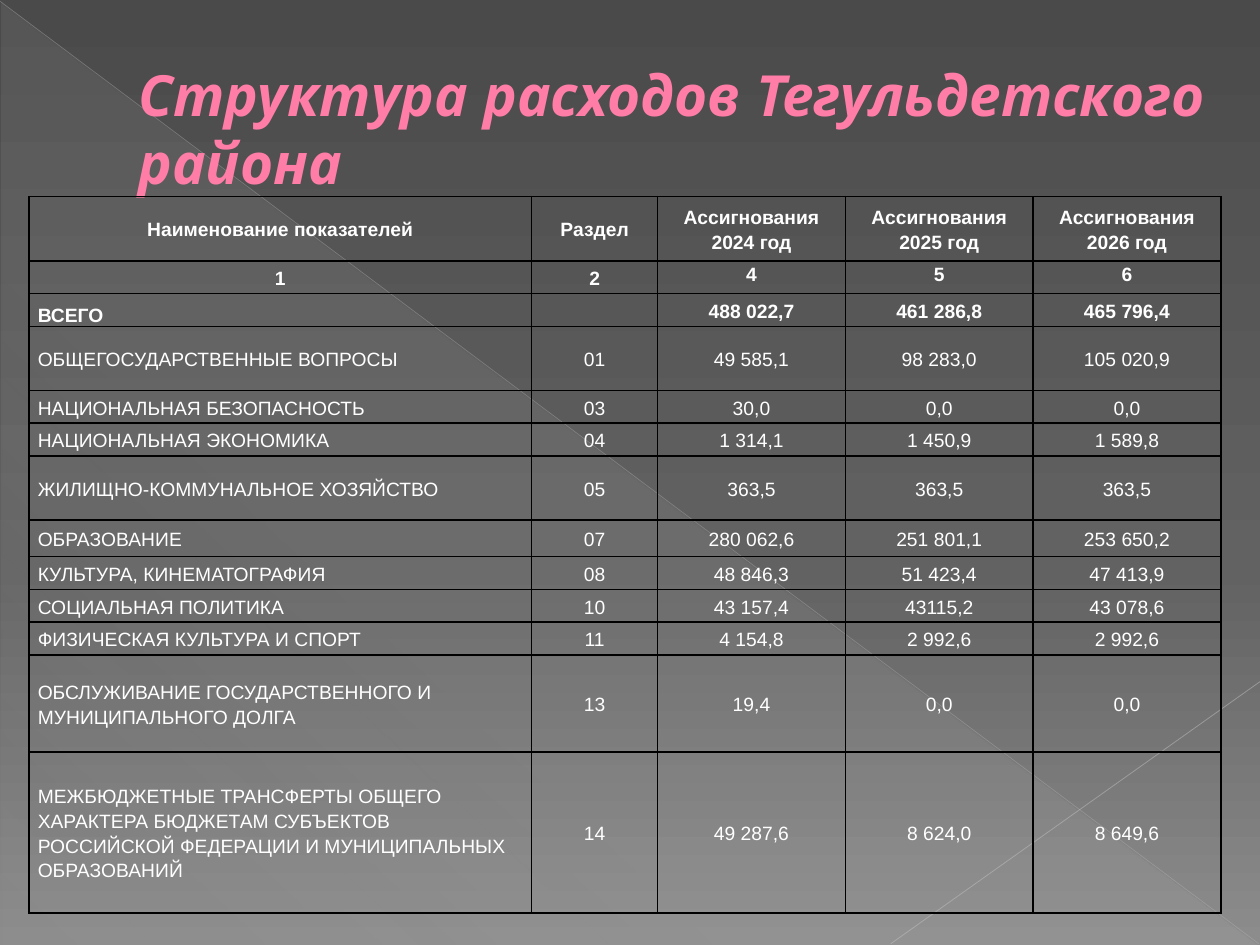
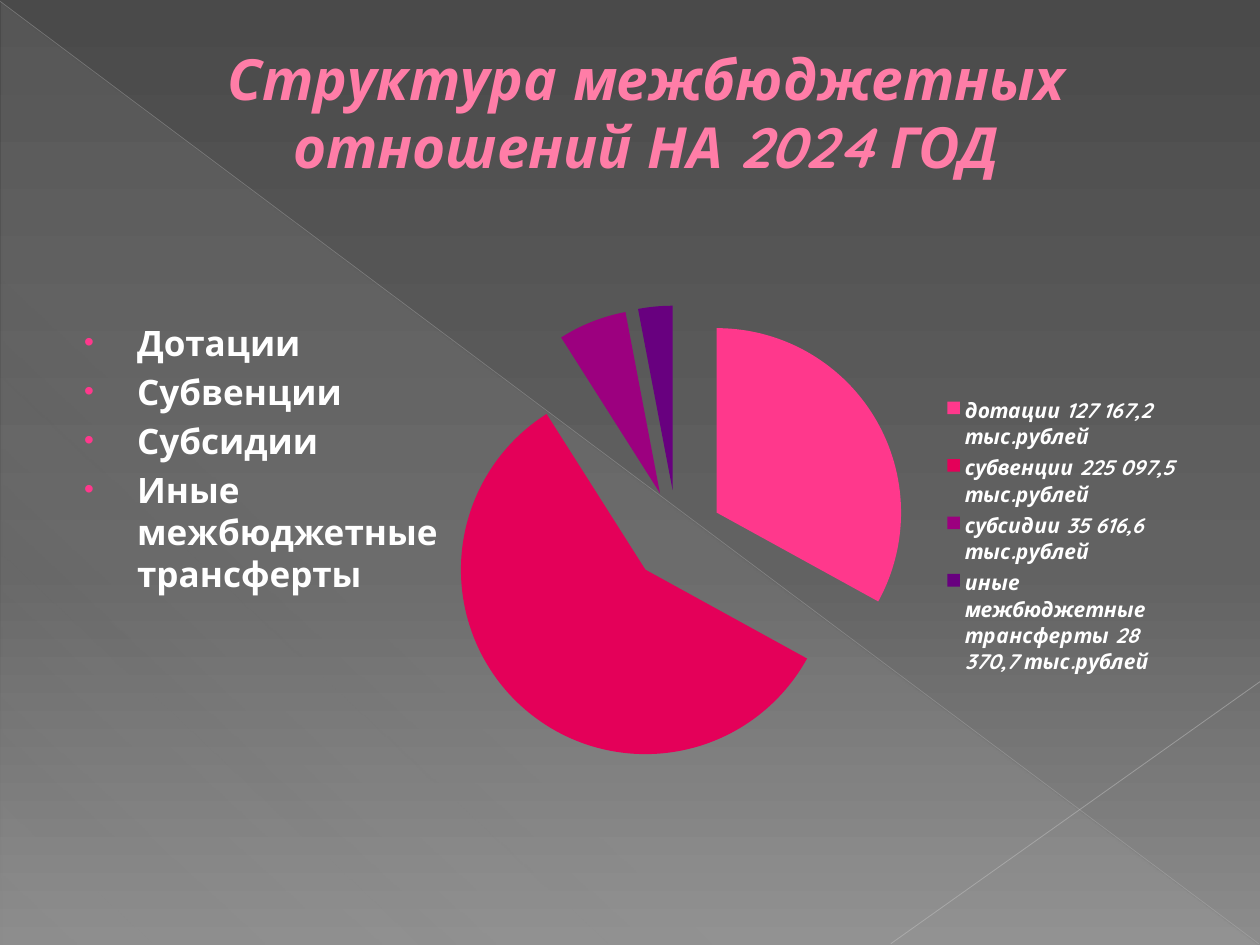
from dataclasses import dataclass

from lxml import etree
from pptx import Presentation
from pptx.chart.data import CategoryChartData
from pptx.dml.color import RGBColor
from pptx.enum.chart import XL_CHART_TYPE as ChartType, XL_LEGEND_POSITION as LegendPosition
from pptx.enum.shapes import MSO_CONNECTOR as Connector, MSO_SHAPE as Shape
from pptx.enum.text import MSO_ANCHOR as Anchor, MSO_AUTO_SIZE as AutoSize, PP_ALIGN as Align
from pptx.oxml.ns import qn
from pptx.util import Inches, Pt


@dataclass(frozen=True)
class Theme:
    title_font: str = "Quicksand"
    table_font: str = "Arial"
    text: str = "FFFFFF"
    title: str = "FF7DA7"
    title_outline: str = "B12761"
    accent: str = "FF388C"
    border: str = "000000"
    veil: str = "D2D2D2"
    diagonal: str = "BFBFBF"
    corner: str = "C6C6C6"
    background: tuple = ((0, "4A4A4A", 100), (60, "626262", 100), (100, "8C8C8C", 100))
    slices: tuple = ("FF388C", "E40059", "9C007F", "68007F")
    title_size: float = 32.4
    body_size: float = 20
    legend_size: float = 12
    chart_size: float = 10
    table_size: float = 11


THEME = Theme()

COLUMN_WIDTHS = (3.99, 1, 1.49, 1.49, 1.49)
EXPENSES = [
    (0.51, "Наименование показателей", "Раздел",
     "Ассигнования 2024 год", "Ассигнования 2025 год", "Ассигнования 2026 год"),
    (0.26, "1", "2", "4", "5", "6"),
    (0.26, "ВСЕГО", "", "488 022,7", "461 286,8", "465 796,4"),
    (0.51, "ОБЩЕГОСУДАРСТВЕННЫЕ ВОПРОСЫ", "01", "49 585,1", "98 283,0", "105 020,9"),
    (0.26, "НАЦИОНАЛЬНАЯ БЕЗОПАСНОСТЬ", "03", "30,0", "0,0", "0,0"),
    (0.26, "НАЦИОНАЛЬНАЯ ЭКОНОМИКА", "04", "1 314,1", "1 450,9", "1 589,8"),
    (0.51, "ЖИЛИЩНО-КОММУНАЛЬНОЕ ХОЗЯЙСТВО", "05", "363,5", "363,5", "363,5"),
    (0.29, "ОБРАЗОВАНИЕ", "07", "280 062,6", "251 801,1", "253 650,2"),
    (0.26, "КУЛЬТУРА, КИНЕМАТОГРАФИЯ", "08", "48 846,3", "51 423,4", "47 413,9"),
    (0.26, "СОЦИАЛЬНАЯ ПОЛИТИКА", "10", "43 157,4", "43115,2", "43 078,6"),
    (0.26, "ФИЗИЧЕСКАЯ КУЛЬТУРА И СПОРТ", "11", "4 154,8", "2 992,6", "2 992,6"),
    (0.77, "ОБСЛУЖИВАНИЕ ГОСУДАРСТВЕННОГО И МУНИЦИПАЛЬНОГО ДОЛГА",
     "13", "19,4", "0,0", "0,0"),
    (1.28, "МЕЖБЮДЖЕТНЫЕ ТРАНСФЕРТЫ ОБЩЕГО ХАРАКТЕРА БЮДЖЕТАМ СУБЪЕКТОВ "
           "РОССИЙСКОЙ ФЕДЕРАЦИИ И МУНИЦИПАЛЬНЫХ ОБРАЗОВАНИЙ",
     "14", "49 287,6", "8 624,0", "8 649,6"),
]
BOLD_ROWS = 3
NUMBERING_ROW, TOTAL_ROW = 1, 2

TRANSFER_KINDS = ["Дотации", "Субвенции", "Субсидии", "Иные межбюджетные трансферты"]
TRANSFER_SHARES = {
    "дотации 127 167,2 тыс.рублей": 33,
    "субвенции 225 097,5 тыс.рублей": 58,
    "субсидии 35 616,6 тыс.рублей": 6,
    "иные межбюджетные трансферты 28 370,7 тыс.рублей": 3,
}


def box(left, top, width, height):
    return Inches(left), Inches(top), Inches(width), Inches(height)


def add_node(parent, tag, **attributes):
    return etree.SubElement(parent, qn(tag), attributes)


def add_color(parent, color, opacity=100):
    node = add_node(parent, "a:srgbClr", val=color)
    if opacity < 100:
        add_node(node, "a:alpha", val=str(opacity * 1000))


def add_solid_fill(parent, color, opacity=100):
    add_color(add_node(parent, "a:solidFill"), color, opacity)


def style_font(font, name, size, color=THEME.text, bold=False, italic=False):
    font.name = name
    font.size = Pt(size)
    font.bold = bold
    font.italic = italic
    font.color.rgb = RGBColor.from_string(color)


def set_gradient(fill, owner, stops, angle):
    fill.gradient()
    fill.gradient_angle = 360 - angle
    stop_list = owner.find(".//" + qn("a:gsLst"))
    for stop in list(stop_list):
        stop_list.remove(stop)
    for position, color, opacity in stops:
        add_color(add_node(stop_list, "a:gs", pos=str(position * 1000)), color, opacity)


def add_hairline(slide, start, end, color, width, opacity):
    line = slide.shapes.add_connector(
        Connector.STRAIGHT, *(Inches(value) for value in start + end))
    line.line.width = Pt(width)
    line.line.color.rgb = RGBColor.from_string(color)
    tint = line.element.find(".//" + qn("a:ln")).find(".//" + qn("a:srgbClr"))
    add_node(tint, "a:alpha", val=str(opacity * 1000))
    add_node(line.element.spPr, "a:effectLst")
    return line


def build_backdrop(master, slide):
    set_gradient(master.background.fill, master.element, THEME.background, 90)
    veil = slide.shapes.add_shape(Shape.RIGHT_TRIANGLE, *box(0.01, 0.02, 9.98, 7.48))
    veil.shadow.inherit = False
    veil.line.fill.background()
    veil_stops = [(position, THEME.veil, opacity)
                  for position, opacity in ((0, 10), (70, 8), (100, 1))]
    set_gradient(veil.fill, veil.element, veil_stops, 133)
    diagonal = add_hairline(slide, (0, 0.01), (9.99, 7.49), THEME.diagonal, 0.39, 35)
    corner = add_hairline(slide, (10, 5.41), (7.07, 7.49), THEME.corner, 0.47, 45)
    for index, shape in enumerate((veil, diagonal, corner)):
        shape.element.find(".//" + qn("p:cNvPr")).set("id", str(100 + index))
        master.shapes.element.insert(2 + index, shape.element)


def set_title(slide, text, frame, alignment):
    title = slide.shapes.title
    title.left, title.top, title.width, title.height = box(*frame)
    text_frame = title.text_frame
    text_frame.text = text
    text_frame.auto_size = AutoSize.NONE
    text_frame.vertical_anchor = Anchor.MIDDLE
    paragraph = text_frame.paragraphs[0]
    paragraph.alignment = alignment
    properties = paragraph._p.get_or_add_pPr()
    properties.set("marL", str(Inches(0.53)))
    properties.set("indent", "0")
    run = paragraph.runs[0]
    style_font(run.font, THEME.title_font, THEME.title_size, THEME.title, True, True)
    run_properties = run._r.get_or_add_rPr()
    outline = add_node(run_properties, "a:ln", w=str(Pt(0.5)))
    add_solid_fill(outline, THEME.title_outline)
    run_properties.insert(0, outline)


def add_borders(cell):
    properties = cell._tc.get_or_add_tcPr()
    for side in ("a:lnL", "a:lnR", "a:lnT", "a:lnB"):
        add_solid_fill(add_node(properties, side, w=str(Pt(1))), THEME.border)


def fill_cell(cell, text, alignment, anchor, bold):
    cell.margin_left = cell.margin_right = Inches(0.07)
    cell.margin_top = cell.margin_bottom = 0
    cell.vertical_anchor = anchor
    add_borders(cell)
    cell.fill.background()
    cell.text_frame.text = text
    paragraph = cell.text_frame.paragraphs[0]
    paragraph.alignment = alignment
    paragraph.line_spacing = 1.15
    for run in paragraph.runs:
        style_font(run.font, THEME.table_font, THEME.table_size, bold=bold)
    if not text:
        add_node(paragraph._p, "a:endParaRPr", sz=str(THEME.table_size * 100))


def cell_anchor(row, column):
    if row == NUMBERING_ROW and column >= 2:
        return Anchor.TOP
    if row == TOTAL_ROW and column == 0:
        return Anchor.BOTTOM
    return Anchor.MIDDLE


def add_expense_table(slide):
    frame = slide.shapes.add_table(
        len(EXPENSES), len(COLUMN_WIDTHS), *box(0.23, 1.56, 9.45, 5.68))
    table = frame.table
    table.first_row = False
    table.horz_banding = False
    for column, width in zip(table.columns, COLUMN_WIDTHS):
        column.width = Inches(width)
    for row, (height, *texts) in enumerate(EXPENSES):
        table.rows[row].height = Inches(height)
        for column, text in enumerate(texts):
            is_name = column == 0 and row >= TOTAL_ROW
            fill_cell(table.cell(row, column), text,
                      Align.LEFT if is_name else Align.CENTER,
                      cell_anchor(row, column), row < BOLD_ROWS)


def add_bullets(slide, items, frame):
    text_frame = slide.shapes.add_textbox(*box(*frame)).text_frame
    text_frame.word_wrap = True
    text_frame.text = "\n".join(items)
    for paragraph in text_frame.paragraphs:
        paragraph.space_before = Pt(THEME.body_size * 0.2)
        properties = paragraph._p.get_or_add_pPr()
        properties.set("marL", str(Inches(0.49)))
        properties.set("indent", str(Inches(-0.42)))
        add_color(add_node(properties, "a:buClr"), THEME.accent)
        add_node(properties, "a:buSzPct", val="80000")
        add_node(properties, "a:buFont", typeface="Arial")
        add_node(properties, "a:buChar", char="•")
        style_font(paragraph.runs[0].font, THEME.title_font, THEME.body_size, bold=True)


def set_plot_area(chart, left, top, width, height):
    plot_area = chart._chartSpace.chart.plotArea
    for layout in plot_area.findall(qn("c:layout")):
        plot_area.remove(layout)
    layout = add_node(plot_area, "c:layout")
    plot_area.insert(0, layout)
    manual = add_node(layout, "c:manualLayout")
    add_node(manual, "c:layoutTarget", val="inner")
    for name in ("xMode", "yMode"):
        add_node(manual, "c:" + name, val="edge")
    for name, value in zip("xywh", (left, top, width, height)):
        add_node(manual, "c:" + name, val=str(value))


def add_transfer_pie(slide):
    data = CategoryChartData()
    data.categories = list(TRANSFER_SHARES)
    data.add_series("Series 1", list(TRANSFER_SHARES.values()))
    chart = slide.shapes.add_chart(ChartType.PIE, *box(3.36, 1.64, 6.1, 5.23), data).chart
    style_font(chart.font, THEME.title_font, THEME.chart_size)
    chart.has_title = False
    chart.has_legend = True
    chart.legend.position = LegendPosition.RIGHT
    chart.legend.include_in_layout = True
    style_font(chart.legend.font, THEME.title_font, THEME.legend_size, bold=True, italic=True)
    plot = chart.plots[0]
    plot.vary_by_categories = True
    series = plot.series[0]
    for index, color in enumerate(THEME.slices):
        fill = series.points[index].format.fill
        fill.solid()
        fill.fore_color.rgb = RGBColor.from_string(color)
    explosion = add_node(series._element, "c:explosion", val="25")
    series._element.find(qn("c:dPt")).addprevious(explosion)
    set_plot_area(chart, 0.03, 0.02, 0.6, 0.96)


def main():
    presentation = Presentation()
    presentation.slide_width = Inches(10)
    presentation.slide_height = Inches(7.5)
    title_only = presentation.slide_layouts[5]

    expenses = presentation.slides.add_slide(title_only)
    build_backdrop(presentation.slide_master, expenses)
    set_title(expenses, "Структура расходов Тегульдетского района",
              (0.47, 0.47, 9.3, 1.09), Align.LEFT)
    add_expense_table(expenses)

    transfers = presentation.slides.add_slide(title_only)
    set_title(transfers, "Структура межбюджетных отношений НА 2024 ГОД",
              (0.23, 0.29, 9.27, 1.19), Align.CENTER)
    add_bullets(transfers, TRANSFER_KINDS, (0.5, 2.5, 3.33, 4.3))
    add_transfer_pie(transfers)

    presentation.save("out.pptx")


if __name__ == "__main__":
    main()
